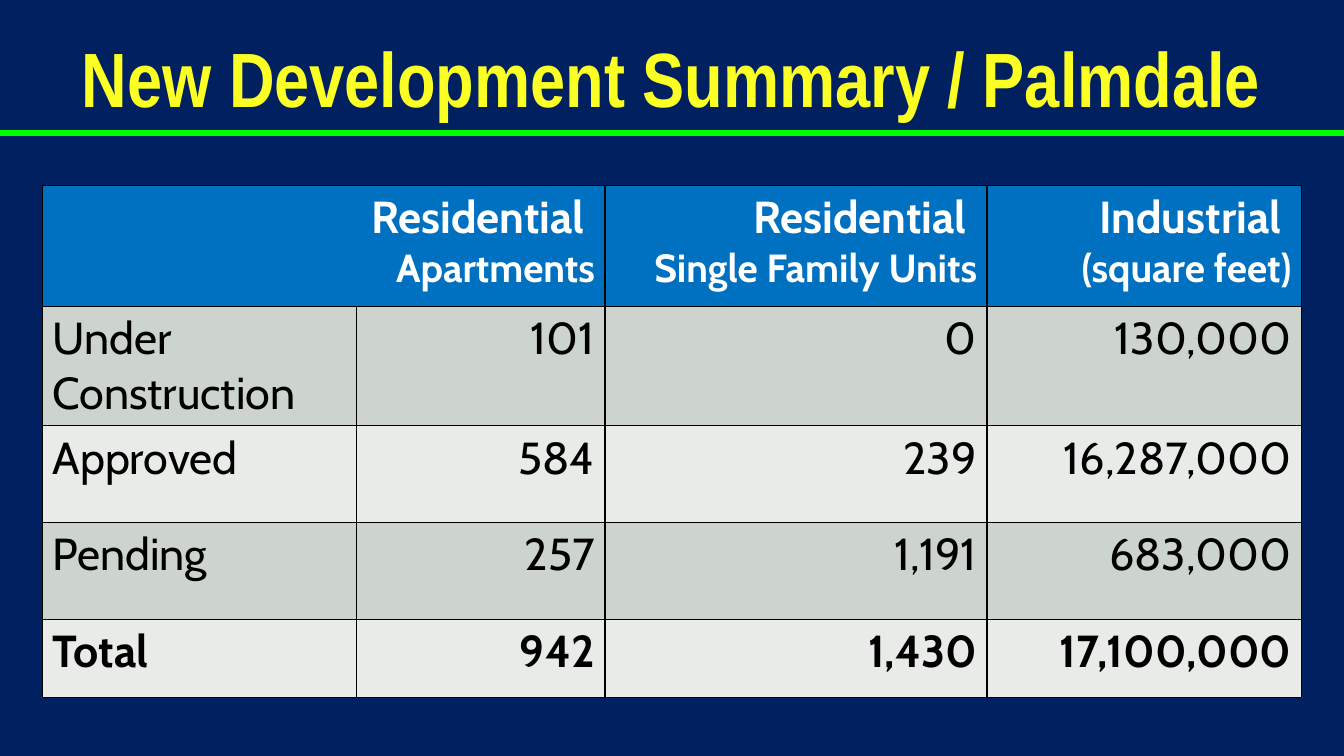
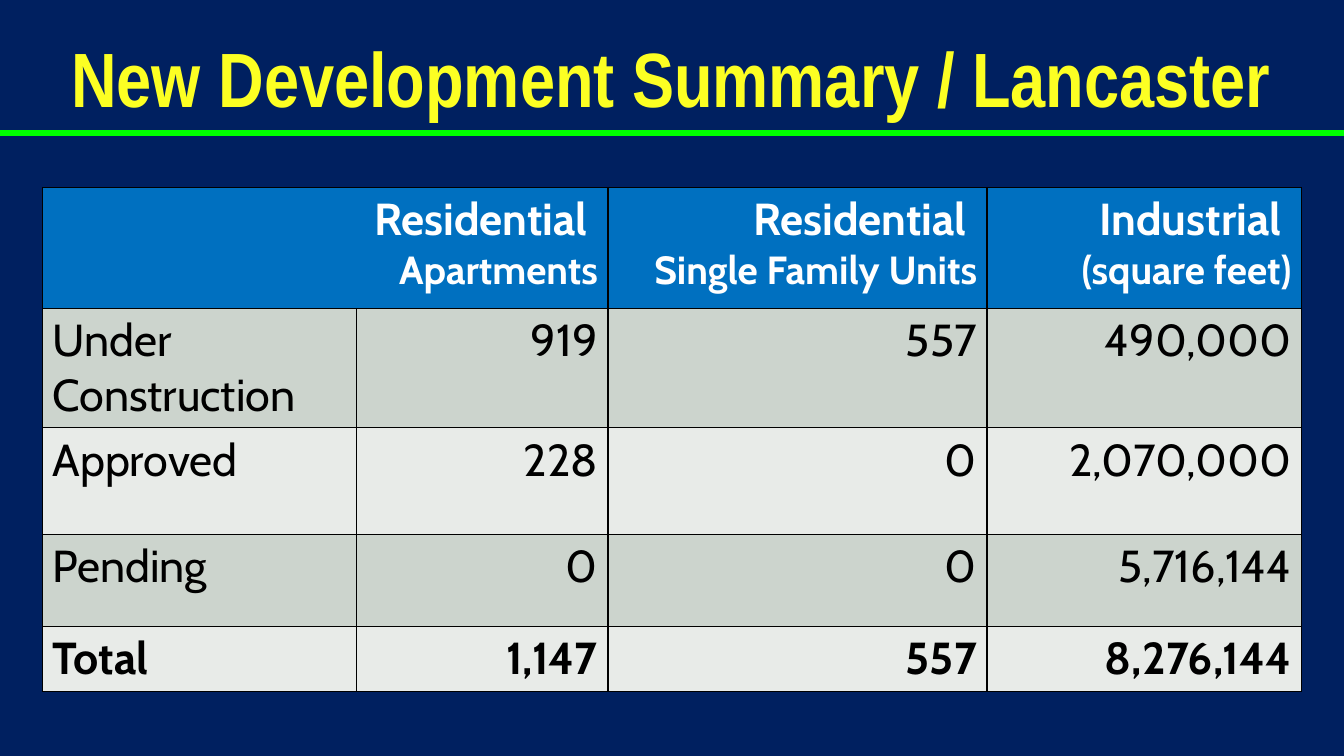
from dataclasses import dataclass

from lxml import etree
from pptx import Presentation
from pptx.dml.color import RGBColor
from pptx.enum.text import MSO_ANCHOR, MSO_AUTO_SIZE, PP_ALIGN
from pptx.enum.shapes import MSO_CONNECTOR
from pptx.oxml.ns import qn
from pptx.util import Inches, Pt

LEFT, CENTER, RIGHT = PP_ALIGN.LEFT, PP_ALIGN.CENTER, PP_ALIGN.RIGHT
MIDDLE = MSO_ANCHOR.MIDDLE
NO_AUTOFIT = MSO_AUTO_SIZE.NONE
STRAIGHT = MSO_CONNECTOR.STRAIGHT
TITLE_ONLY = 5
PAGE_WIDTH, PAGE_HEIGHT = 13.33, 7.5


@dataclass(frozen=True)
class Theme:
    background: str = "002060"
    title: str = "FCFF23"
    rule: str = "00FF00"
    header: str = "0070C0"
    header_text: str = "FFFFFF"
    text: str = "000000"
    border: str = "000000"
    bands: tuple = ("CCD4CD", "E8EBE8")
    title_font: str = "Arial Narrow"
    table_font: str = "Cabin"
    title_size: int = 55
    text_size: int = 32
    unit_size: int = 28
    rule_width: int = 4
    border_width: int = 1


HEADERS = [
    ("Residential ", "Apartments"),
    ("Residential ", "Single Family Units"),
    ("Industrial ", "(square feet)"),
]
STAGES = ["Under Construction", "Approved", "Pending", "Total"]
CITIES = [
    {
        "city": "Palmdale",
        "top": 1.84,
        "columns": [3.12, 2.46, 3.79, 3.12],
        "rows": [1.2, 1.18, 0.96, 0.96, 0.78],
        "figures": [
            ("101", "0", "130,000"),
            ("584", "239", "16,287,000"),
            ("257", "1,191", "683,000"),
            ("942", "1,430", "17,100,000"),
        ],
    },
    {
        "city": "Lancaster",
        "top": 1.86,
        "columns": [3.12, 2.49, 3.76, 3.12],
        "rows": [1.2, 1.18, 1.06, 0.91, 0.65],
        "figures": [
            ("919", "557", "490,000"),
            ("228", "0", "2,070,000"),
            ("0", "0", "5,716,144"),
            ("1,147", "557", "8,276,144"),
        ],
    },
]


class SummaryDeck:
    def __init__(self, theme):
        self.theme = theme
        self.deck = Presentation()
        self.deck.slide_width = Inches(PAGE_WIDTH)
        self.deck.slide_height = Inches(PAGE_HEIGHT)
        self.fill(self.deck.slide_master.background, theme.background)
        self.page = None

    def fill(self, target, color):
        target.fill.solid()
        target.fill.fore_color.rgb = RGBColor.from_string(color)

    def style(self, paragraph, align, color, **formats):
        paragraph.alignment = align
        for name, value in formats.items():
            setattr(paragraph.font, name, value)
        paragraph.font.color.rgb = RGBColor.from_string(color)

    def add_page(self, title):
        theme = self.theme
        self.page = self.deck.slides.add_slide(self.deck.slide_layouts[TITLE_ONLY])
        self.add_rule()
        box = self.page.shapes.title
        place = {"left": 0.08, "top": 0.32, "width": 13.15, "height": 1}
        for side, length in place.items():
            setattr(box, side, Inches(length))
        frame = box.text_frame
        frame.text = title
        frame.word_wrap = True
        frame.auto_size = NO_AUTOFIT
        frame.vertical_anchor = MIDDLE
        paragraph = frame.paragraphs[0]
        paragraph.line_spacing = 0.9
        self.style(paragraph, CENTER, theme.title, name=theme.title_font,
                   size=Pt(theme.title_size), bold=True)

    def add_rule(self):
        """Draw the line under the title."""
        height = Inches(1.32)
        rule = self.page.shapes.add_connector(
            STRAIGHT, 0, height, Inches(PAGE_WIDTH), height)
        rule.line.color.rgb = RGBColor.from_string(self.theme.rule)
        rule.line.width = Pt(self.theme.rule_width)
        etree.SubElement(rule._element.spPr, qn("a:effectLst"))

    def add_borders(self, cell):
        properties = cell._tc.get_or_add_tcPr()
        for side in ("lnL", "lnR", "lnT", "lnB"):
            line = etree.SubElement(properties, qn(f"a:{side}"),
                                    w=str(Pt(self.theme.border_width)))
            solid = etree.SubElement(line, qn("a:solidFill"))
            etree.SubElement(solid, qn("a:srgbClr"), val=self.theme.border)

    def write_cell(self, cell, lines, align, color, bold):
        """Write one paragraph per line; lines after the first are smaller."""
        theme = self.theme
        cell.text = "\n".join(lines)
        for index, paragraph in enumerate(cell.text_frame.paragraphs):
            size = theme.unit_size if index else theme.text_size
            self.style(paragraph, align, color, name=theme.table_font,
                       size=Pt(size), bold=bold)

    def add_table(self, top, columns, rows, figures):
        theme = self.theme
        table = self.page.shapes.add_table(
            len(rows), len(columns), Inches(0.42), Inches(top),
            Inches(sum(columns)), Inches(sum(rows))).table
        for column, width in zip(table.columns, columns):
            column.width = Inches(width)
        for row, height in zip(table.rows, rows):
            row.height = Inches(height)

        for row_index, row in enumerate(table.rows):
            band = theme.bands[(row_index - 1) % 2] if row_index else theme.header
            for cell in row.cells:
                self.add_borders(cell)
                self.fill(cell, band)

        table.cell(0, 0).merge(table.cell(0, 1))
        for column, lines in zip((0, 2, 3), HEADERS):
            self.write_cell(table.cell(0, column), lines, RIGHT,
                            theme.header_text, True)
        for row, (stage, values) in enumerate(zip(STAGES, figures), 1):
            for column, text in enumerate((stage, *values)):
                self.write_cell(table.cell(row, column), [text],
                                RIGHT if column else LEFT, theme.text,
                                stage == "Total")


def main():
    summary = SummaryDeck(Theme())
    for entry in CITIES:
        summary.add_page(f"New Development Summary / {entry['city']}")
        summary.add_table(entry["top"], entry["columns"], entry["rows"],
                          entry["figures"])
    summary.deck.save("out.pptx")


if __name__ == "__main__":
    main()
